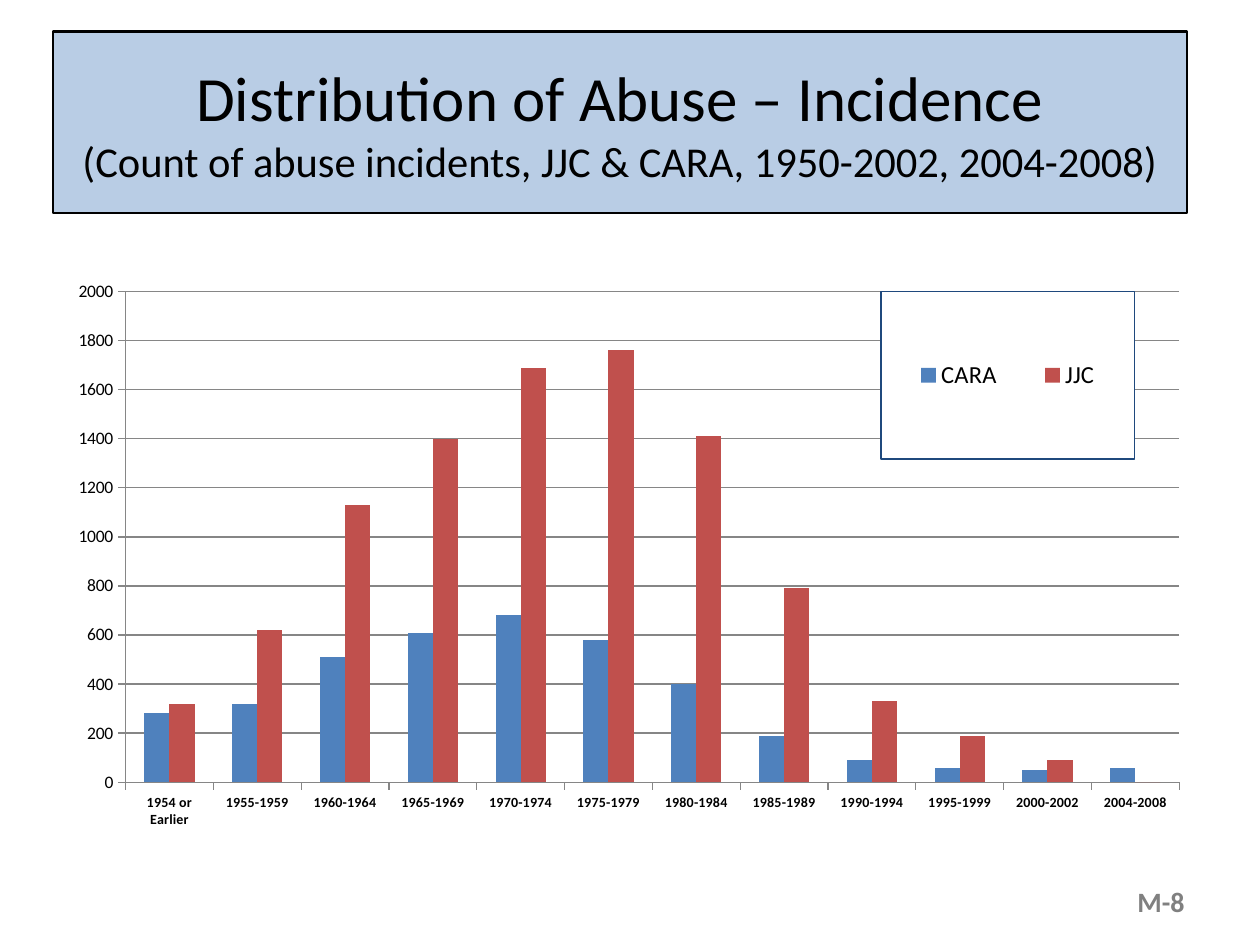
from lxml import etree
from pptx import Presentation
from pptx.chart.data import CategoryChartData
from pptx.dml.color import RGBColor
from pptx.enum.chart import XL_CHART_TYPE as ChartType, XL_LEGEND_POSITION as LegendPosition
from pptx.enum.chart import XL_TICK_MARK as TickMark
from pptx.enum.text import MSO_ANCHOR as Anchor, PP_ALIGN as Align
from pptx.oxml import parse_xml
from pptx.oxml.ns import nsdecls, qn
from pptx.util import Inches, Pt

FONT = "Calibri"
BLACK = RGBColor(0x00, 0x00, 0x00)
GRAY = RGBColor(0x80, 0x80, 0x80)
GRID = RGBColor(0x86, 0x86, 0x86)
PALE_BLUE = RGBColor(0xB9, 0xCD, 0xE5)
BLUE = RGBColor(0x4F, 0x81, 0xBD)
RED = RGBColor(0xC0, 0x50, 0x4D)
WHITE = RGBColor(0xFF, 0xFF, 0xFF)
NAVY = RGBColor(0x1F, 0x49, 0x7D)

PERIODS = ["1954 or Earlier", "1955-1959", "1960-1964", "1965-1969",
           "1970-1974", "1975-1979", "1980-1984", "1985-1989",
           "1990-1994", "1995-1999", "2000-2002", "2004-2008"]
INCIDENTS = [
    ("CARA", BLUE, [280, 320, 510, 610, 680, 580, 400, 190, 90, 60, 50, 60]),
    ("JJC", RED, [320, 620, 1130, 1400, 1690, 1760, 1410, 790, 330, 190, 90, 0]),
]


def format_font(font, size, color=BLACK, bold=False):
    font.name = FONT
    font.size = Pt(size)
    font.bold = bold
    font.color.rgb = color


def add_span(para, text, **style):
    span = para.add_run()
    span.text = text
    format_font(span.font, **style)


def place(shape, left, top, width, height):
    shape.left, shape.top = Inches(left), Inches(top)
    shape.width, shape.height = Inches(width), Inches(height)


def fill_title(page):
    title = page.shapes.title
    place(title, 0.42, 0.25, 9, 1.44)
    title.fill.solid()
    title.fill.fore_color.rgb = PALE_BLUE
    title.line.color.rgb = BLACK
    title.line.width = Pt(1.5)
    frame = title.text_frame
    frame.word_wrap = True
    frame.vertical_anchor = Anchor.MIDDLE
    para = frame.paragraphs[0]
    para.alignment = Align.CENTER
    add_span(para, "Distribution of Abuse – Incidence", size=36)
    para.add_line_break()
    add_span(para, "(Count of abuse incidents, JJC & CARA, 1950-2002, 2004-2008)", size=24.3)


def set_layout(element, index, bounds, inner=False):
    for old in element.findall(qn("c:layout")):
        element.remove(old)
    target = '<c:layoutTarget val="inner"/>' if inner else ""
    modes = "".join(f'<c:{side}Mode val="edge"/>' for side in "xy")
    sizes = "".join(f'<c:{key} val="{value}"/>' for key, value in zip("xywh", bounds))
    element.insert(index, parse_xml(
        f'<c:layout {nsdecls("c")}><c:manualLayout>{target}{modes}{sizes}'
        '</c:manualLayout></c:layout>'))


def format_axis(axis, size, bold=False):
    axis.major_tick_mark = TickMark.OUTSIDE
    axis.minor_tick_mark = TickMark.NONE
    axis.format.line.color.rgb = GRID
    format_font(axis.tick_labels.font, size, bold=bold)


def add_legend(chart):
    chart.has_legend = True
    legend = chart.legend
    legend.position = LegendPosition.RIGHT
    legend.include_in_layout = False
    format_font(legend.font, 14)
    element = legend._element
    set_layout(element, 1, (0.73, 0.075, 0.21, 0.253))
    element.find(qn("c:txPr")).addprevious(parse_xml(
        f'<c:spPr {nsdecls("c", "a")}>'
        f'<a:solidFill><a:srgbClr val="{WHITE}"/></a:solidFill>'
        f'<a:ln w="9525"><a:solidFill><a:srgbClr val="{NAVY}"/></a:solidFill></a:ln>'
        '</c:spPr>'))


def add_incident_chart(page):
    data = CategoryChartData()
    data.categories = PERIODS
    for name, _, counts in INCIDENTS:
        data.add_series(name, counts)
    chart = page.shapes.add_chart(
        ChartType.COLUMN_CLUSTERED, Inches(0), Inches(1.92),
        Inches(9.58), Inches(5.25), data).chart
    chart.has_title = False
    format_font(chart.font, 10)
    plot = chart.plots[0]
    plot.gap_width = 150
    plot.overlap = 0
    plot.vary_by_categories = False
    for series, (_, color, _) in zip(plot.series, INCIDENTS):
        series.format.fill.solid()
        series.format.fill.fore_color.rgb = color
    format_axis(chart.category_axis, 8, bold=True)
    counts_axis = chart.value_axis
    format_axis(counts_axis, 10)
    counts_axis.minimum_scale, counts_axis.maximum_scale = 0, 2000
    counts_axis.major_unit = 200
    counts_axis.has_major_gridlines = True
    counts_axis.major_gridlines.format.line.color.rgb = GRID
    plot_area = chart._chartSpace.find(".//" + qn("c:plotArea"))
    set_layout(plot_area, 0, (0.104, 0.075, 0.873, 0.742), inner=True)
    add_legend(chart)


def add_page_label(page, text):
    box = page.shapes.add_textbox(Inches(7.17), Inches(6.95), Inches(2.33), Inches(0.4))
    frame = box.text_frame
    frame.word_wrap = True
    frame.vertical_anchor = Anchor.MIDDLE
    para = frame.paragraphs[0]
    para.alignment = Align.RIGHT
    add_span(para, text, size=16, color=GRAY, bold=True)


def main():
    deck = Presentation()
    deck.slide_width, deck.slide_height = Inches(10), Inches(7.5)
    page = deck.slides.add_slide(deck.slide_layouts[5])
    fill_title(page)
    add_incident_chart(page)
    add_page_label(page, "M-8")
    deck.save("out.pptx")


if __name__ == "__main__":
    main()
